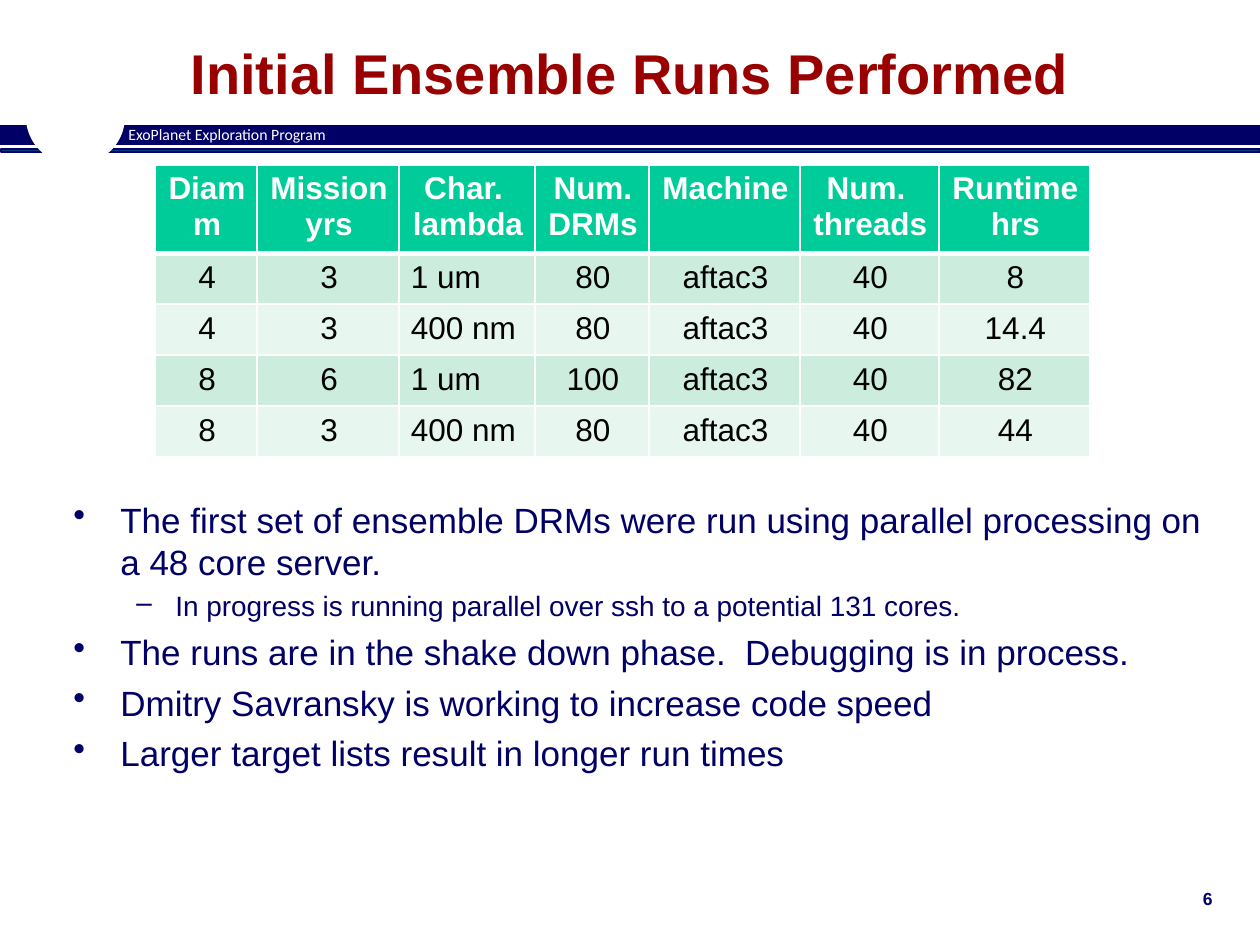
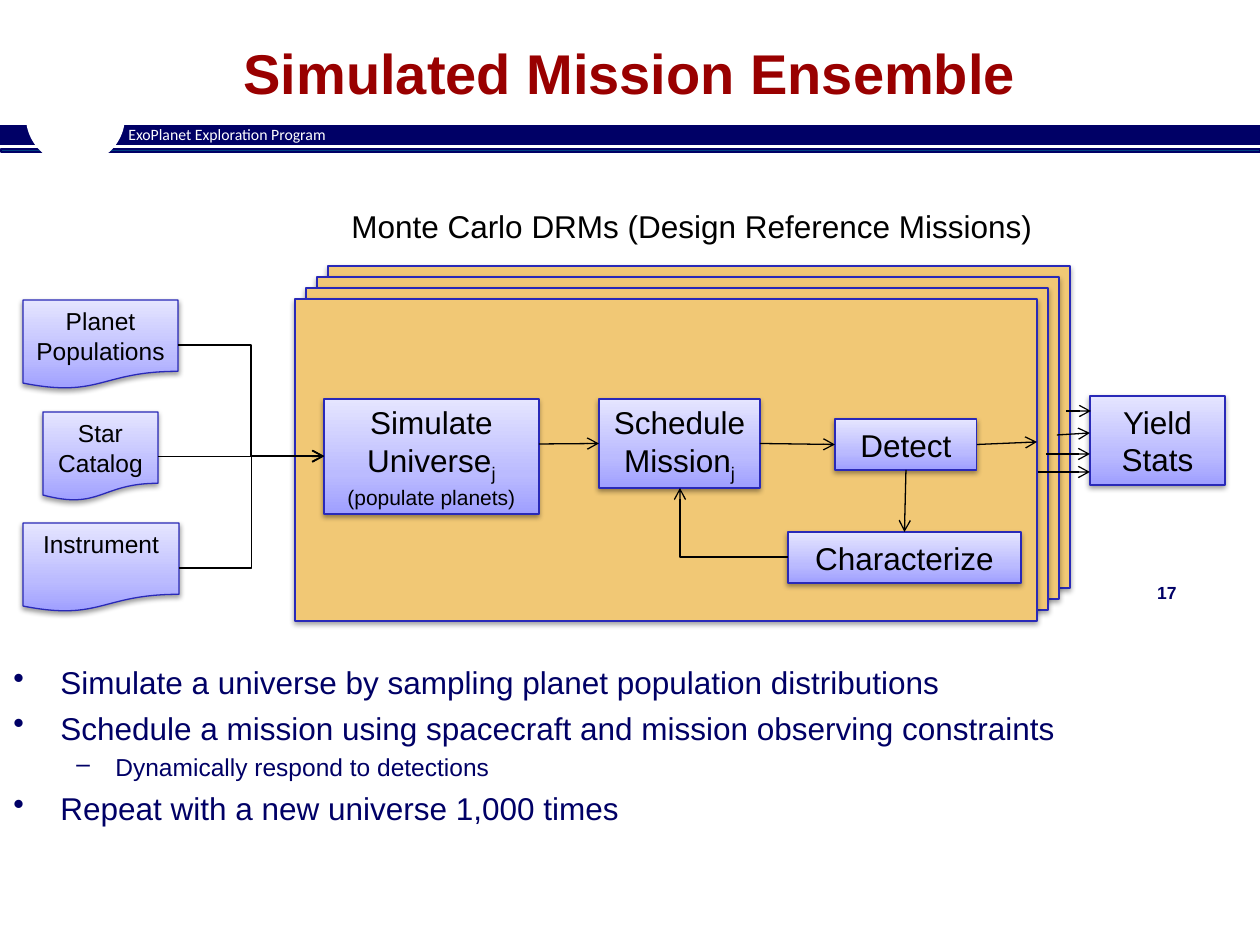
"""Build two slides on simulated mission ensembles: a run table and a flow diagram."""
from lxml import etree
from pptx import Presentation
from pptx.dml.color import RGBColor
from pptx.enum.shapes import MSO_CONNECTOR, MSO_SHAPE
from pptx.enum.text import MSO_ANCHOR, PP_ALIGN
from pptx.oxml import parse_xml
from pptx.oxml.ns import qn
from pptx.util import Pt

PX = 7257
RECT, OVAL, PAGE = MSO_SHAPE.RECTANGLE, MSO_SHAPE.OVAL, MSO_SHAPE.FLOWCHART_DOCUMENT
STRAIGHT, ELBOW = MSO_CONNECTOR.STRAIGHT, MSO_CONNECTOR.ELBOW
LEFT, MID, RIGHT = PP_ALIGN.LEFT, PP_ALIGN.CENTER, PP_ALIGN.RIGHT
TOP, CENTRE = MSO_ANCHOR.TOP, MSO_ANCHOR.MIDDLE

NAVY = RGBColor(0x00, 0x00, 0x66)
TEAL = RGBColor(0x00, 0x40, 0x80)
RED = RGBColor(0x99, 0x00, 0x00)
WHITE = RGBColor(0xFF, 0xFF, 0xFF)
BLACK = RGBColor(0x00, 0x00, 0x00)
GREEN = RGBColor(0x00, 0xCC, 0x99)
MINT = RGBColor(0xCC, 0xEC, 0xDE)
PALE = RGBColor(0xE7, 0xF6, 0xEF)
SAND = RGBColor(0xF1, 0xC8, 0x75)
BLUE = RGBColor(0x29, 0x29, 0xB8)

NS = 'xmlns:a="http://schemas.openxmlformats.org/drawingml/2006/main"'
STOPS = "".join(
    f'<a:gs pos="{pos}000"><a:srgbClr val="{hue}"/></a:gs>'
    for pos, hue in [(0, "9F9FFF"), (35, "BBBBFF"), (100, "E5E5FF")])
GRAD = f'<a:gradFill {NS}><a:gsLst>{STOPS}</a:gsLst><a:lin ang="16200000" scaled="0"/></a:gradFill>'
SHADE = (f'<a:outerShdw {NS} blurRad="39370" dist="20320" dir="5400000" rotWithShape="0">'
         '<a:srgbClr val="000000"><a:alpha val="38000"/></a:srgbClr></a:outerShdw>')


def write(par, text, size, color=BLACK, bold=False, face="Arial"):
    run = par.add_run()
    run.text = text
    run.font.size, run.font.bold, run.font.name = Pt(size), bold, face
    run.font.color.rgb = color
    return run


def draw(slide, kind, at, fill=None, line=None, shade=False):
    shape = slide.shapes.add_shape(kind, *[n * PX for n in at])
    shape.shadow.inherit = False
    if fill is None:
        shape._element.spPr.find(qn("a:prstGeom")).addnext(parse_xml(GRAD))
    else:
        shape.fill.solid()
        shape.fill.fore_color.rgb = fill
    if line is None:
        shape.line.fill.background()
    else:
        shape.line.color.rgb, shape.line.width = line, Pt(0.75)
    if shade:
        shape._element.spPr.find(qn("a:effectLst")).append(parse_xml(SHADE))
    return shape


prs = Presentation()
prs.slide_width, prs.slide_height = 1260 * PX, 945 * PX

pages = [
    ("Initial Ensemble Runs Performed", "6", (963, 882, 262, 30), (61, 492, 1165, 345), 20, 16, [
        (0, "The first set of ensemble DRMs were run using parallel processing on a 48 core server."),
        (1, "In progress is running parallel over ssh to a potential 131 cores."),
        (0, "The runs are in the shake down phase.  Debugging is in process."),
        (0, "Dmitry Savransky is working to increase code speed"),
        (0, "Larger target lists result in longer run times")]),
    ("Simulated Mission Ensemble", "17", (927, 576, 262, 30), (1, 657, 1259, 286), 18, 14, [
        (0, "Simulate a universe by sampling planet population distributions"),
        (0, "Schedule a mission using spacecraft and mission observing constraints"),
        (1, "Dynamically respond to detections"),
        (0, "Repeat with a new universe 1,000 times")]),
]
slides = []
for title, num, spot, area, big, small, points in pages:
    slide = prs.slides.add_slide(prs.slide_layouts[5])
    slides.append(slide)
    draw(slide, RECT, (0, 125, 1260, 20), NAVY)
    draw(slide, RECT, (1, 149, 1259, 3), TEAL, NAVY)
    draw(slide, OVAL, (26, 69, 99, 96), WHITE)

    head = slide.shapes.title
    head.left, head.top, head.width, head.height = [n * PX for n in (94, -6, 1072, 157)]
    head.text_frame.vertical_anchor = CENTRE
    par = head.text_frame.paragraphs[0]
    par.alignment = MID
    write(par, title, 32, RED, True)

    for at, text, size, color, bold, face, align in [
            ((116, 119, 276, 31), "ExoPlanet Exploration Program", 9, WHITE, False, "Calibri", LEFT),
            (spot, num, 10, NAVY, True, "Arial", RIGHT)]:
        frame = slide.shapes.add_textbox(*[n * PX for n in at]).text_frame
        frame.word_wrap = True
        par = frame.paragraphs[0]
        par.alignment = align
        write(par, text, size, color, bold, face)

    frame = slide.shapes.add_textbox(*[n * PX for n in area]).text_frame
    frame.word_wrap = True
    for i, (level, text) in enumerate(points):
        par = frame.add_paragraph() if i else frame.paragraphs[0]
        size = small if level else big
        props = par._p.get_or_add_pPr()
        props.set("marL", str((102 if level else 47) * PX))
        props.set("indent", str((-39 if level else -47) * PX))
        etree.SubElement(props, qn("a:buChar")).set("char", "–" if level else "•")
        par.level = level
        if i:
            par.space_before = Pt(size * 0.24)
        write(par, text, size, NAVY)

runs, flow = slides

rows = [
    ("Diam\nm", "Mission\nyrs", "Char. \nlambda", "Num.\nDRMs", "Machine", "Num. \nthreads", "Runtime\nhrs"),
    ("4", "3", "1 um", "80", "aftac3", "40", "8"),
    ("4", "3", "400 nm", "80", "aftac3", "40", "14.4"),
    ("8", "6", "1 um", "100", "aftac3", "40", "82"),
    ("8", "3", "400 nm", "80", "aftac3", "40", "44"),
]
widths = [102, 142, 136, 114, 151, 139, 151]
table = runs.shapes.add_table(
    len(rows), len(widths), 155 * PX, 165 * PX, sum(widths) * PX, 287 * PX).table
table.horz_banding = False
for col, width in zip(table.columns, widths):
    col.width = width * PX
for r, row in enumerate(rows):
    table.rows[r].height = (51 if r else 83) * PX
    for c, text in enumerate(row):
        cell = table.cell(r, c)
        cell.margin_left, cell.margin_right = 12 * PX, 10 * PX
        props = cell._tc.get_or_add_tcPr()
        for side in "LRTB":
            thick = 3 if (r, side) in [(0, "B"), (1, "T")] else 1
            props.append(parse_xml(
                f'<a:ln{side} {NS} w="{thick * 12700}"><a:solidFill>'
                f'<a:srgbClr val="FFFFFF"/></a:solidFill></a:ln{side}>'))
        cell.fill.solid()
        cell.fill.fore_color.rgb = (MINT if r % 2 else PALE) if r else GREEN
        for i, part in enumerate(text.split("\n")):
            par = cell.text_frame.add_paragraph() if i else cell.text_frame.paragraphs[0]
            par.alignment = LEFT if r and c == 2 else MID
            write(par, part, 18, BLACK if r else WHITE, not r)

for i in (3, 2, 1, 0):
    draw(flow, RECT, (295 + 11 * i, 299 - 11 * i, 742, 322), SAND, BLUE, True)

frame = flow.shapes.add_textbox(339 * PX, 201 * PX, 718 * PX, 50 * PX).text_frame
frame.word_wrap = False
write(frame.paragraphs[0], "Monte Carlo DRMs (Design Reference Missions)", 18)

nodes = [
    ("detect", RECT, (835, 419, 142, 51), 18, [["Detect"]]),
    ("plan", RECT, (599, 399, 161, 89), 18, [["Schedule"], ["Mission", "j"]]),
    ("yield", RECT, (1090, 396, 135, 89), 18, [["Yield"], ["Stats"]]),
    ("sim", RECT, (324, 399, 215, 115), 18, [["Simulate Universe", "j"], ["(populate planets)"]]),
    ("char", RECT, (788, 532, 233, 51), 18, [["Characterize"]]),
    ("planet", PAGE, (23, 300, 155, 89), 14, [["Planet Populations"]]),
    ("star", PAGE, (43, 412, 115, 89), 14, [["Star"], ["Catalog"]]),
    ("tool", PAGE, (23, 523, 156, 89), 14, [["Instrument"]]),
]
parts = {}
for name, kind, at, size, lines in nodes:
    shape = draw(flow, kind, at, None, BLUE, True)
    parts[name] = shape
    frame = shape.text_frame
    frame.word_wrap = True
    frame.vertical_anchor = TOP if kind == PAGE else CENTRE
    for i, line in enumerate(lines):
        par = frame.add_paragraph() if i else frame.paragraphs[0]
        par.alignment = MID
        for text in line:
            run = write(par, text, 12 if text.startswith("(") else size)
            if text == "j":
                run.font._element.set("baseline", "-25000")

arrows = [
    (STRAIGHT, (760, 443, 835, 444), ("plan", 3), ("detect", 1)),
    (STRAIGHT, (539, 444, 599, 443), None, ("plan", 1)),
    (STRAIGHT, (977, 444, 1037, 442), ("detect", 3), None),
    (STRAIGHT, (906, 470, 904, 532), ("detect", 2), ("char", 0)),
    (STRAIGHT, (158, 456, 324, 456), ("star", 3), ("sim", 1)),
    (STRAIGHT, (1066, 411, 1091, 411), None, None),
    (STRAIGHT, (1057, 435, 1090, 433), None, None),
    (STRAIGHT, (1046, 454, 1090, 454), None, None),
    (STRAIGHT, (1038, 472, 1090, 472), None, None),
    (ELBOW, (179, 568, 324, 456), None, None),
    (ELBOW, (178, 345, 324, 456), None, None),
    (ELBOW, (788, 557, 680, 488), None, None),
]
for kind, ends, start, stop in arrows:
    link = flow.shapes.add_connector(kind, *[n * PX for n in ends])
    if start:
        link.begin_connect(parts[start[0]], start[1])
    if stop:
        link.end_connect(parts[stop[0]], stop[1])
    link.line.color.rgb, link.line.width = BLACK, Pt(0.75)
    props = link._element.spPr
    etree.SubElement(props.find(qn("a:ln")), qn("a:tailEnd")).set("type", "arrow")
    etree.SubElement(props, qn("a:effectLst"))
    if ends[0] > ends[2] and kind == ELBOW:
        props.find(qn("a:prstGeom")).set("prst", "bentConnector2")

prs.save("out.pptx")
